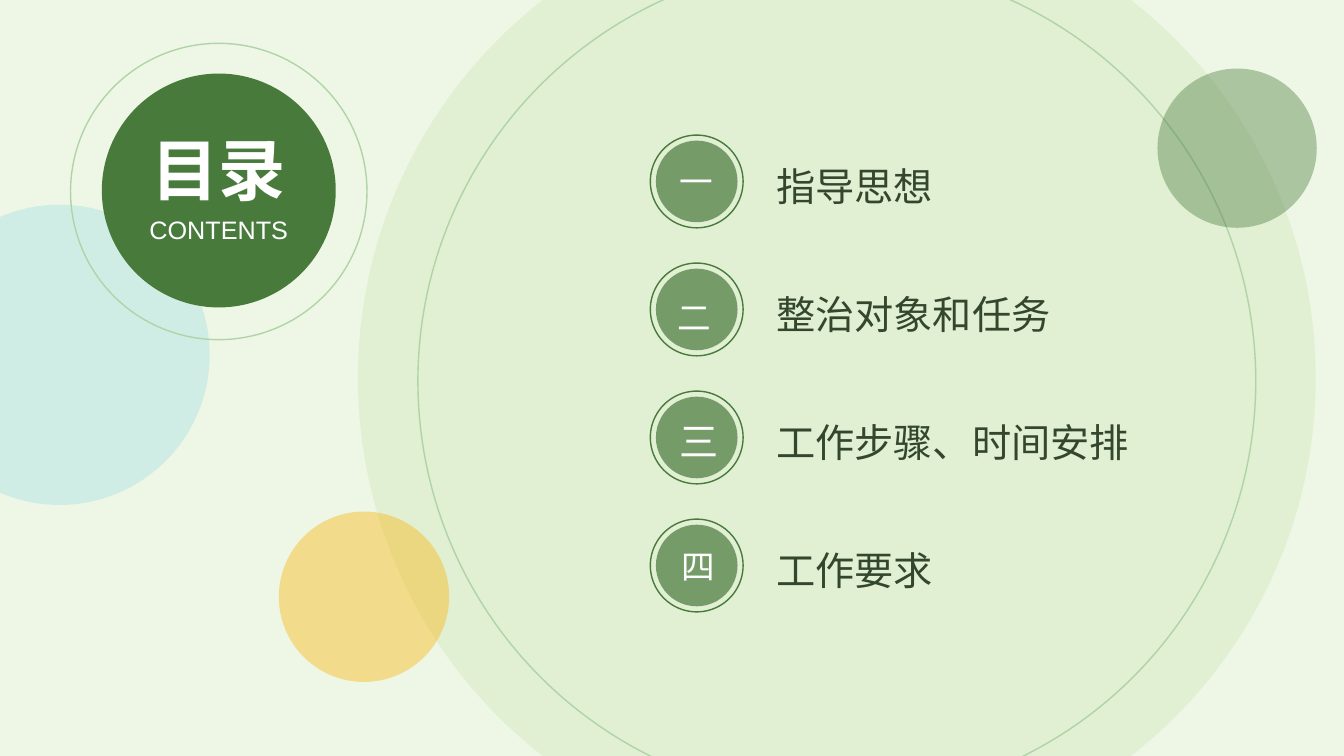
from lxml.etree import SubElement
from pptx import Presentation
from pptx.dml.color import RGBColor
from pptx.enum.shapes import MSO_SHAPE
from pptx.enum.text import MSO_ANCHOR, PP_ALIGN
from pptx.oxml.ns import qn
from pptx.util import Inches, Pt

WIDTH, HEIGHT = 13.33, 7.5
GREEN, PALE_LINE, TEXT_GREEN, WHITE = "487A3C", "B0D4A7", "33462E", "FFFFFF"
CJK_FONT = "Noto Sans CJK SC"

# centre x, centre y, diameter, fill, opacity in percent, line
BACKDROP = [
    (8.3, 3.75, 9.5, "CBE2B1", 35, None),
    (8.3, 3.78, 8.31, None, 100, PALE_LINE),
    (0.59, 3.52, 2.98, "B3E5E6", 50, None),
    (2.17, 1.9, 2.94, None, 100, PALE_LINE),
    (3.61, 5.92, 1.69, "F9B407", 40, None),
    (2.17, 1.89, 2.32, GREEN, 100, None),
    (12.27, 1.47, 1.58, GREEN, 40, None),
]
# numeral, numeral size, numeral shift from the badge centre, label
ITEMS = [
    ("一", 24, (0, 0), "指导思想"),
    ("二", 24, (-0.02, 0.08), "整治对象和任务"),
    ("三", 28, (0.02, 0.03), "工作步骤、时间安排"),
    ("四", 24, (0.02, 0.01), "工作要求"),
]
BADGE_X, FIRST_Y, ROW_STEP = 6.91, 1.8, 1.27
LABEL_X, LABEL_WIDTH, LABEL_HEIGHT = 7.7, 4, 0.52


def color(value):
    return RGBColor.from_string(value)


def add_shape(slide, kind, box, fill=None, opacity=100, line=None):
    shape = slide.shapes.add_shape(kind, *map(Inches, box))
    shape.shadow.inherit = False
    if fill:
        shape.fill.solid()
        shape.fill.fore_color.rgb = color(fill)
        if opacity < 100:
            fill_color = shape.fill._xPr.find(qn("a:solidFill"))[0]
            SubElement(fill_color, qn("a:alpha")).set("val", str(opacity * 1000))
    else:
        shape.fill.background()
    if line:
        shape.line.color.rgb = color(line)
        shape.line.width = Pt(1)
    else:
        shape.line.fill.background()


def add_circle(slide, x, y, diameter, *style):
    box = (x - diameter / 2, y - diameter / 2, diameter, diameter)
    add_shape(slide, MSO_SHAPE.OVAL, box, *style)


def add_text(slide, text, box, size, font_name, text_color=WHITE,
             alignment=PP_ALIGN.CENTER, bold=False, spacing=1.0):
    frame = slide.shapes.add_textbox(*map(Inches, box)).text_frame
    frame.word_wrap = True
    frame.vertical_anchor = MSO_ANCHOR.MIDDLE
    frame.margin_left = frame.margin_right = 0
    frame.margin_top = frame.margin_bottom = 0
    frame.text = text
    paragraph = frame.paragraphs[0]
    paragraph.alignment = alignment
    paragraph.line_spacing = spacing
    font = paragraph.runs[0].font
    font.size = Pt(size)
    font.bold = bold
    font.color.rgb = color(text_color)
    font.name = font_name
    SubElement(font._element, qn("a:ea")).set("typeface", CJK_FONT)


def add_item(slide, y, numeral, size, shift, label):
    add_circle(slide, BADGE_X, y, 0.81, GREEN, 70)
    add_circle(slide, BADGE_X, y, 0.92, None, 100, GREEN)
    x_shift, y_shift = shift
    numeral_box = (BADGE_X + x_shift - 0.4, y + y_shift - 0.25, 0.8, 0.5)
    add_text(slide, numeral, numeral_box, size, "Arial")
    label_box = (LABEL_X, y + 0.02 - LABEL_HEIGHT / 2, LABEL_WIDTH, LABEL_HEIGHT)
    add_text(slide, label, label_box, 28, CJK_FONT, TEXT_GREEN,
             PP_ALIGN.LEFT, spacing=1.1)


def main():
    presentation = Presentation()
    presentation.slide_width = Inches(WIDTH)
    presentation.slide_height = Inches(HEIGHT)
    slide = presentation.slides.add_slide(presentation.slide_layouts[6])

    add_shape(slide, MSO_SHAPE.RECTANGLE, (0, 0, WIDTH, HEIGHT), "EEF7E5")
    for circle in BACKDROP:
        add_circle(slide, *circle)
    for row, item in enumerate(ITEMS):
        add_item(slide, FIRST_Y + row * ROW_STEP, *item)
    add_text(slide, "目录", (1.37, 1.27, 1.6, 0.81), 48, "Montserrat", bold=True)
    add_text(slide, "CONTENTS", (1.37, 2.08, 1.6, 0.4), 18, "Arial")
    presentation.save("out.pptx")


if __name__ == "__main__":
    main()
